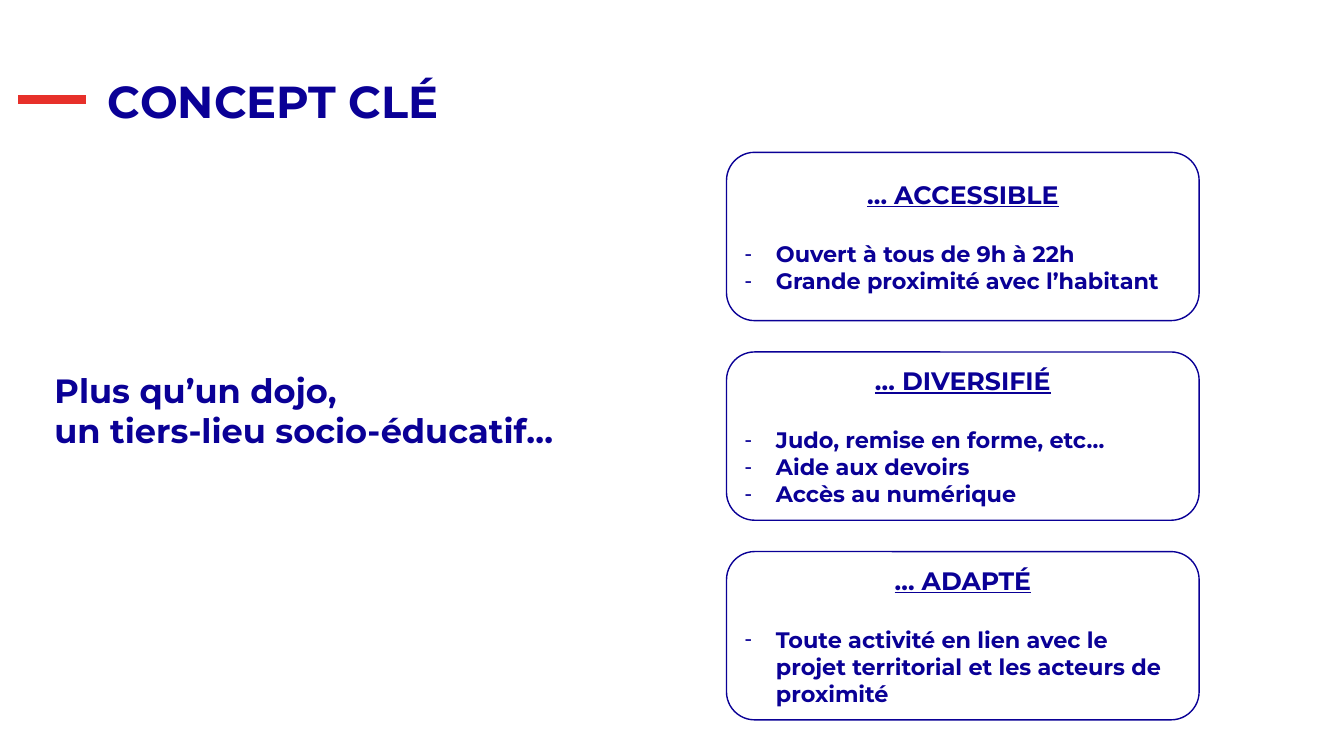
from lxml import etree
from pptx import Presentation
from pptx import util as u
from pptx.dml.color import RGBColor
from pptx.enum import shapes, text
from pptx.oxml.ns import qn

NAVY, RED, WHITE = "0A0096", "E7302A", "FFFFFF"
CARDS = [
    ("… ACCESSIBLE", ["Ouvert à tous de 9h à 22h", "Grande proximité avec l’habitant"]),
    ("… DIVERSIFIÉ", ["Judo, remise en forme, etc…", "Aide aux devoirs", "Accès au numérique"]),
    ("… ADAPTÉ", ["Toute activité en lien avec le projet territorial et les acteurs de proximité"]),
]


def colour(value):
    return RGBColor.from_string(value)


def apply(target, formats):
    for name, value in formats.items():
        setattr(target, name, value)


def write(paragraph, content, size, **formats):
    run = paragraph.add_run()
    run.text = content
    apply(run.font, {"name": "Montserrat", "size": u.Pt(size), "bold": True, **formats})
    run.font.color.rgb = colour(NAVY)


def next_paragraph(frame, index):
    return frame.add_paragraph() if index else frame.paragraphs[0]


def add_dash(paragraph):
    properties = paragraph._p.get_or_add_pPr()
    indent = u.Cm(0.79)
    properties.set("marL", str(indent))
    properties.set("indent", str(-indent))
    etree.SubElement(properties, qn("a:buFont")).set("typeface", "Arial")
    etree.SubElement(properties, qn("a:buChar")).set("char", "-")


def add_panel(slide, box, outline=None):
    shape = slide.shapes.add_shape(shapes.MSO_SHAPE.ROUNDED_RECTANGLE, *map(u.Cm, box))
    shape.shadow.inherit = False
    shape.fill.solid()
    shape.fill.fore_color.rgb = colour(WHITE)
    if outline:
        shape.line.color.rgb = colour(outline)
        shape.line.width = u.Pt(1)
    else:
        shape.line.fill.background()
    frame = shape.text_frame
    apply(frame, {"word_wrap": True, "vertical_anchor": text.MSO_ANCHOR.MIDDLE})
    return frame


def add_header(slide, left, top, width, height):
    dash_y = u.Cm(top + 0.76)
    dash = slide.shapes.add_connector(
        shapes.MSO_CONNECTOR.STRAIGHT, u.Cm(left), dash_y, u.Cm(left + 1.7), dash_y)
    dash.line.color.rgb = colour(RED)
    dash.line.width = u.Pt(6)
    etree.SubElement(dash._element.spPr, qn("a:effectLst"))

    indent = 2.26
    title = slide.shapes.add_textbox(
        *map(u.Cm, (left + indent, top, width - indent, height)))
    frame = title.text_frame
    apply(frame, {"word_wrap": True, "vertical_anchor": text.MSO_ANCHOR.BOTTOM,
                  "margin_left": 0, "margin_right": 0, "margin_top": 0, "margin_bottom": 0})
    frame.paragraphs[0].line_spacing = 0.9
    write(frame.paragraphs[0], "CONCEPT CLÉ", 32)


def add_statement(slide, *box):
    frame = add_panel(slide, box)
    for index, line in enumerate(["Plus qu’un dojo,", "un tiers-lieu socio-éducatif…"]):
        paragraph = next_paragraph(frame, index)
        paragraph.alignment = text.PP_ALIGN.LEFT
        write(paragraph, line, 24)


def add_card(slide, box, heading, items):
    frame = add_panel(slide, box, NAVY)
    paragraph = frame.paragraphs[0]
    apply(paragraph, {"alignment": text.PP_ALIGN.CENTER, "space_after": u.Pt(22)})
    write(paragraph, heading, 18, underline=True)
    for item in items:
        paragraph = frame.add_paragraph()
        paragraph.alignment = text.PP_ALIGN.LEFT
        add_dash(paragraph)
        write(paragraph, item, 16)


def add_cards(slide, left, top, width, height):
    gap = 0.79
    card_height = (height - gap * (len(CARDS) - 1)) / len(CARDS)
    for index, (heading, items) in enumerate(CARDS):
        card_top = top + index * (card_height + gap)
        add_card(slide, (left, card_top, width, card_height), heading, items)


def main():
    presentation = Presentation()
    apply(presentation, {"slide_width": u.Cm(33.87), "slide_height": u.Cm(19.05)})
    slide = presentation.slides.add_slide(presentation.slide_layouts[6])
    add_header(slide, 0.46, 1.75, 11.89, 1.47)
    add_statement(slide, 0.91, 8.15, 15.29, 4.37)
    add_cards(slide, 18.31, 3.84, 11.91, 14.3)
    presentation.save("out.pptx")


if __name__ == "__main__":
    main()
